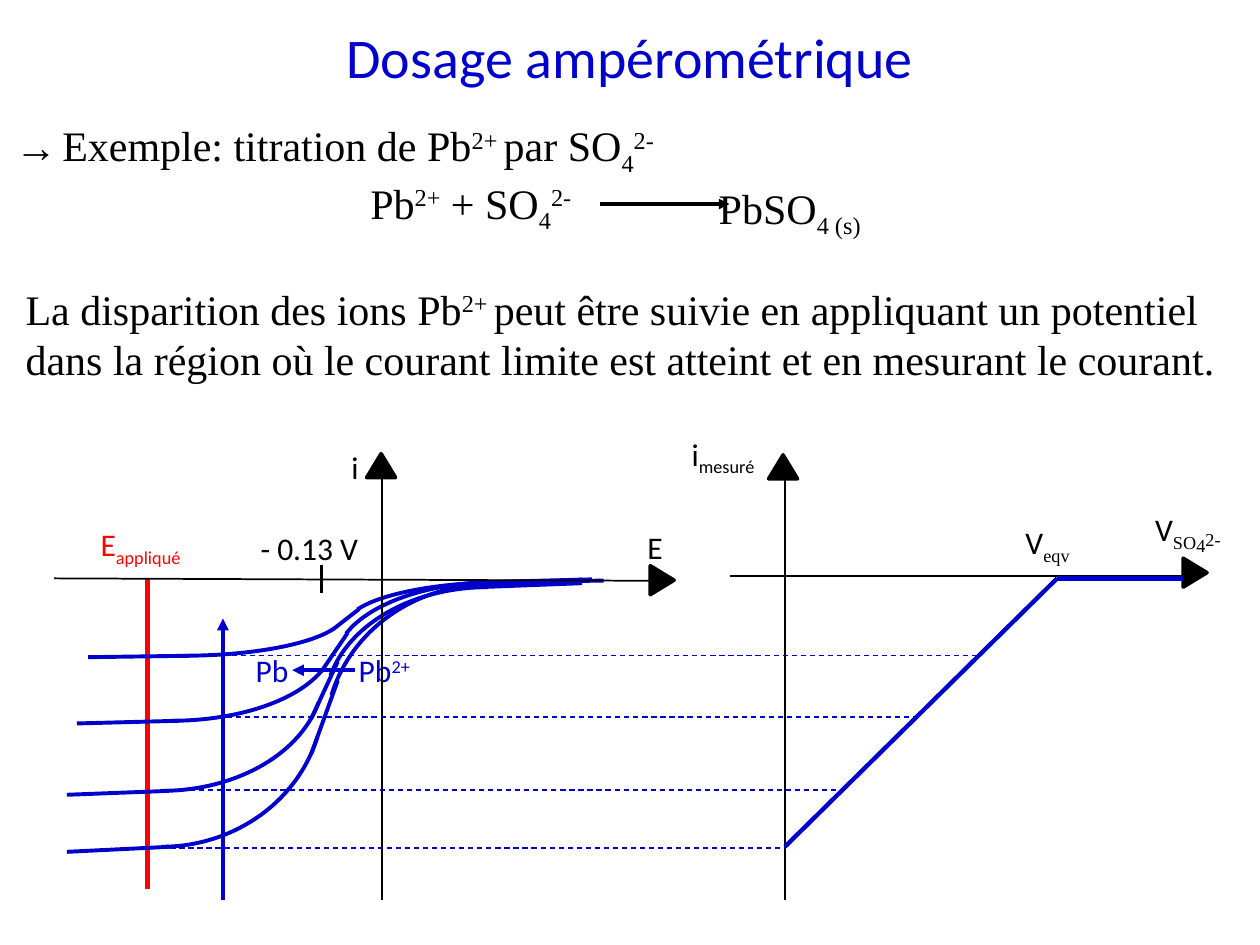
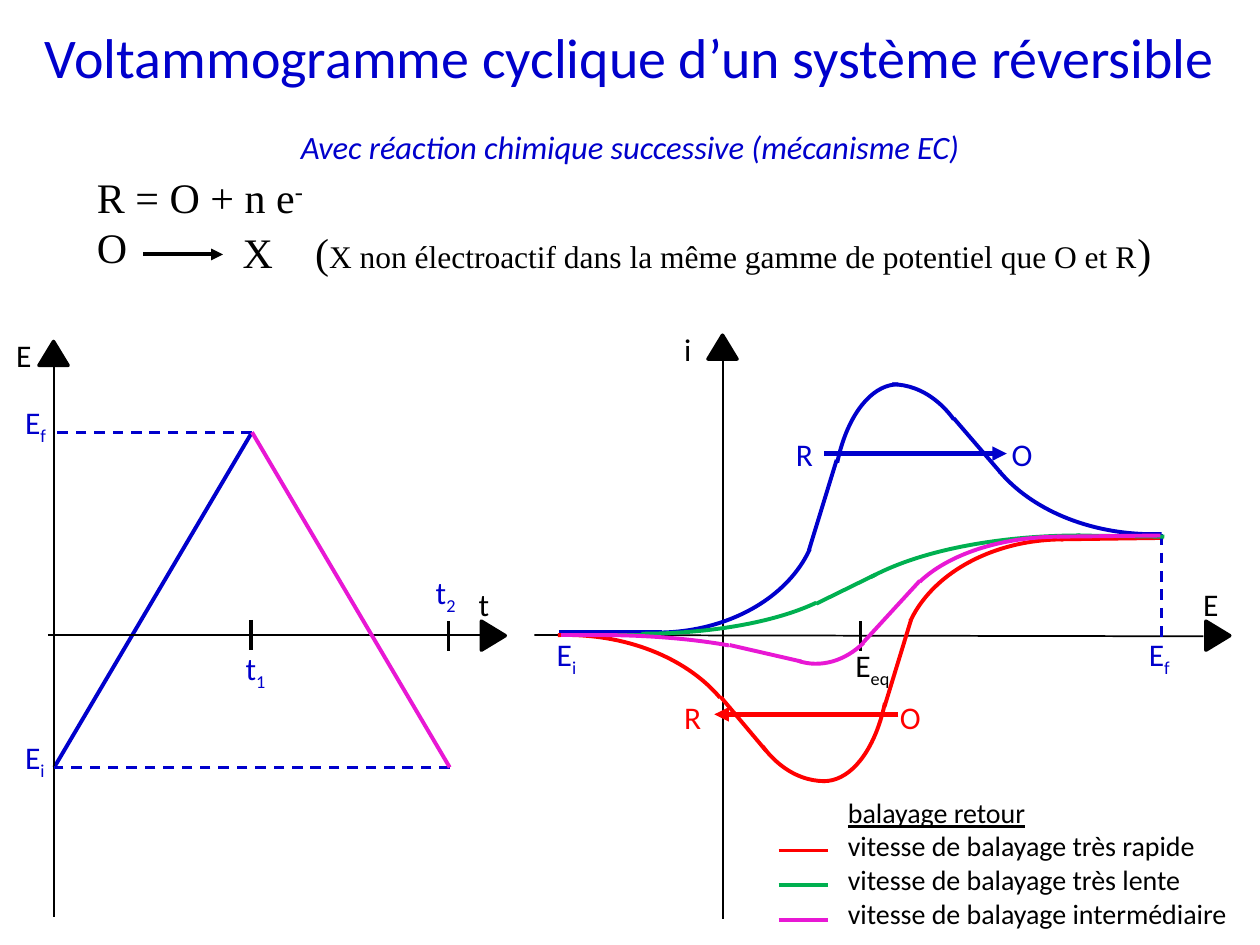
from dataclasses import dataclass
from typing import Any

from lxml.etree import SubElement
from pptx import Presentation
from pptx.dml.color import RGBColor
from pptx.enum.dml import MSO_LINE
from pptx.enum.shapes import MSO_CONNECTOR, MSO_SHAPE
from pptx.enum.text import MSO_ANCHOR, MSO_AUTO_SIZE, PP_ALIGN
from pptx.oxml.ns import qn
from pptx.util import Pt

BLACK = RGBColor(0x00, 0x00, 0x00)
BLUE = RGBColor(0x00, 0x00, 0xCC)
RED = RGBColor(0xFF, 0x00, 0x00)
GREEN = RGBColor(0x00, 0xB0, 0x50)
MAGENTA = RGBColor(0xE8, 0x18, 0xD4)
SANS, SERIF = "Calibri", "Times New Roman"

TITLE = dict(name=SANS, size=Pt(32))
BODY = dict(name=SERIF, size=Pt(24))
LABEL = dict(name=SANS, size=Pt(18))
LEGEND = dict(name=SANS, size=Pt(16))
SMALL_SERIF = dict(name=SERIF)
FRAME = dict(word_wrap=True, auto_size=MSO_AUTO_SIZE.NONE, vertical_anchor=MSO_ANCHOR.TOP)

CURVE = 2.25
HEAD_W, HEAD_H = 16.6, 13.7


def add_runs(p, runs, fmt, color):
    """Each run is text, or (text, baseline in percent[, extra font values])."""
    for run in runs:
        text, base, extra = ((run,) if isinstance(run, str) else run) + (0, {})[:2] \
            if isinstance(run, str) else (run + ({},))[:3]
        r = p.add_run()
        r.text = text
        for key, value in {**fmt, **extra}.items():
            setattr(r.font, key, value)
        r.font.color.rgb = color
        if base:
            r._r.get_or_add_rPr().set("baseline", str(base * 1000))


def format_frame(tf):
    for key, value in FRAME.items():
        setattr(tf, key, value)


def place(sp, x, y, w, h):
    sp.left, sp.top, sp.width, sp.height = Pt(x), Pt(y), Pt(w), Pt(h)
    format_frame(sp.text_frame)


def set_bullet(p, char=None, left=0, hanging=0):
    pPr = p._p.get_or_add_pPr()
    pPr.set("marL", str(Pt(left)))
    pPr.set("indent", str(Pt(-hanging)))
    if char:
        SubElement(pPr, qn("a:buChar")).set("char", char)
    else:
        SubElement(pPr, qn("a:buNone"))


@dataclass
class Region:
    """Draws on a slide with points measured from its own top left corner."""
    shapes: Any
    x: float = 0
    y: float = 0

    def line(self, x1, y1, x2, y2, color=BLACK, width=1, dash=False, arrow=False):
        c = self.shapes.add_connector(
            MSO_CONNECTOR.STRAIGHT, Pt(self.x + x1), Pt(self.y + y1),
            Pt(self.x + x2), Pt(self.y + y2))
        c.line.color.rgb = color
        c.line.width = Pt(width)
        if dash:
            c.line.dash_style = MSO_LINE.DASH
        if arrow:
            SubElement(c.line._get_or_add_ln(), qn("a:tailEnd")).set("type", "triangle")
        SubElement(c._element.spPr, qn("a:effectLst"))

    def arc(self, x, y, w, h, flip, end, color, start=162, rotation=0):
        sp = self.shapes.add_shape(MSO_SHAPE.ARC, Pt(self.x + x), Pt(self.y + y), Pt(w), Pt(h))
        sp.adjustments[0], sp.adjustments[1] = start, end
        sp.rotation = rotation
        for axis in flip:
            sp._element.spPr.find(qn("a:xfrm")).set("flip" + axis, "1")
        sp.fill.background()
        sp.line.color.rgb = color
        sp.line.width = Pt(CURVE)
        sp.shadow.inherit = False

    def axis_head(self, x, y, rotation=0):
        sp = self.shapes.add_shape(MSO_SHAPE.ISOSCELES_TRIANGLE, Pt(self.x + x),
                                   Pt(self.y + y), Pt(HEAD_W), Pt(HEAD_H))
        sp.rotation = rotation
        sp.fill.solid()
        sp.fill.fore_color.rgb = BLACK
        sp.line.color.rgb = BLACK
        sp.line.width = Pt(2)
        SubElement(sp.line._get_or_add_ln(), qn("a:round"))
        sp.shadow.inherit = False

    def text(self, x, y, *runs, color=BLACK, fmt=LABEL, w=60, h=29):
        tf = self.shapes.add_textbox(Pt(self.x + x), Pt(self.y + y), Pt(w), Pt(h)).text_frame
        format_frame(tf)
        add_runs(tf.paragraphs[0], runs, fmt, color)
        return tf

    def curve(self, color, lines, arcs):
        for points in lines:
            self.line(*points, color, CURVE)
        for box, flip, end, *rest in arcs:
            self.arc(*box, flip, end, color, *rest)


def add_slide(prs, title_h, *titles):
    """Title lines are lists of runs; returns the slide's shapes and its body."""
    s = prs.slides.add_slide(prs.slide_layouts[1])
    title, body = s.placeholders
    place(title, 0, 9.4, 720, title_h)
    tf = title.text_frame
    for i, runs in enumerate(titles):
        p = tf.add_paragraph() if i else tf.paragraphs[0]
        p.alignment = PP_ALIGN.CENTER
        add_runs(p, runs, TITLE, BLUE)
    return s.shapes, body


def fill_body(body, box, paragraphs):
    """Each paragraph is (runs, space before, bullet values)."""
    place(body, *box)
    tf = body.text_frame
    for i, (runs, before, bullet) in enumerate(paragraphs):
        p = tf.add_paragraph() if i else tf.paragraphs[0]
        p.space_before = Pt(before)
        set_bullet(p, **bullet)
        add_runs(p, runs, BODY, BLACK)


def polarogram(g, x, y, h, end):
    """One wave; everything follows from its upper arc at x, y with height h."""
    w, bottom, slope = 185.8, y + 0.86 * h, 0.0165 * h
    g.curve(BLUE,
            [(x + 88.6, y, x + 146.9, y - slope),
             (x - 7.9, y + 0.555 * h, x + 7.2, y + 0.315 * h),
             (x - 147.6, bottom + slope, x - 89.3, bottom)],
            [((x, y, w, h), "H", end), ((x - 186.5, y - 0.14 * h, w, h), "V", end)])


def current_potential_chart(g):
    g.line(54.2, 80.5, 54.2, 258.3, RED, 3)
    g.text(20.4, 46.6, "E", ("appliqué", -25), color=RED, w=77)
    g.text(109, 118.6, "Pb", color=BLUE)
    g.text(167.9, 118.6, "Pb", ("2+", 30), color=BLUE)
    for wave in ((155.8, 84.1, 174.2, 206.95), (161.5, 82.6, 92.2, 209.5),
                 (155.8, 85.5, 135.4, 209.5), (168, 82.6, 49, 212.5)):
        polarogram(g, *wave)
    g.text(163.7, 2.7, "i", w=28)
    g.text(111.8, 48.8, "- 0.13 V", w=90)
    g.text(332.9, 48.1, "E", w=42)
    g.line(1, 80.5, 343, 81.9)
    g.line(188.2, 22.2, 188.2, 264.1)
    g.axis_head(179.5, 9.2)
    g.axis_head(340.1, 74.7, 90)
    g.line(153.6, 72.6, 153.6, 89.1, width=2)
    g.line(97.4, 264.1, 97.4, 103.5, BLUE, CURVE, arrow=True)
    g.line(173, 133, 137, 133, BLUE, CURVE, arrow=True)


def titration_chart(g):
    g.text(8.1, 4.8, "i", ("mesuré", -25), w=99)
    g.line(68.6, 32.2, 68.6, 274.1)
    g.axis_head(59.2, 19.9)
    g.line(36.9, 89, 297.5, 89)
    g.axis_head(294.6, 80.4, 90)
    for x1, x2, y in ((-287.8, 68.6, 244.6), (-255.4, 144.2, 169.7),
                      (-247.5, 178.7, 134.4), (-271.3, 98.8, 211.4)):
        g.line(x1, y, x2, y, BLUE, 0.75, dash=True)
    g.line(68.6, 243.8, 224.1, 90.5, BLUE, 2.5)
    g.line(224.1, 90.5, 296.1, 90.5, BLUE, 2.5)
    g.text(198.9, 55.2, "V", ("eqv", -25, SMALL_SERIF))
    g.text(273, 48, "V", ("SO", -25, SMALL_SERIF), ("4", -35, SMALL_SERIF),
           ("2-", -15, SMALL_SERIF), w=67)


def potential_time_chart(g):
    start, peak, end = (31, 253.5), (144, 62), (257, 253.5)
    g.axis_head(273.6, 171.4, 90)
    g.text(266.4, 145.5, "t", w=42)
    g.axis_head(22.3, 10.1)
    g.text(2.2, 3.6, "E", w=28)
    g.line(*start, *peak, BLUE, CURVE)
    g.line(27.4, 177.9, 275, 177.9)
    g.line(31, 18, 31, 339.2)
    for x, y in ((143.3, 169.2), (256.3, 170)):
        g.line(x, y, x, y + 17, width=2)
    for x, y in (peak, end):
        g.line(x, y, 31, y, BLUE, 1.5, dash=True)
    for x, y, name, index in ((7.2, 41.8, "E", "f"), (7.2, 233.3, "E", "i"),
                              (133.2, 182.2, "t", "1"), (241.9, 139, "t", "2")):
        g.text(x, y, name, (index, -25), color=BLUE)
    g.line(*peak, *end, MAGENTA, CURVE)


def voltammogram(g):
    g.text(181.7, 185.8, "E", ("eq", -25))
    g.line(5.3, 182.9, 387.6, 183.6)
    g.line(113.3, 23.8, 113.3, 344.9)
    g.axis_head(104.6, 11.5)
    g.axis_head(387.6, 176.4, 90)
    g.line(191.8, 175, 191.8, 192.2, width=2)
    g.text(380.4, 150.5, "E", w=39)
    g.text(83.8, 5, "i", w=28)
    g.curve(BLUE,
            [(245, 59, 271.7, 90), (19.7, 181.4, 78, 181.4), (162.2, 134.6, 178.1, 82.8)],
            [((175.9, 39.6, 74.9, 140.4), "H", 194.32),
             ((-17, 38.9, 185, 142.6), "V", 206.95),
             ((255.8, -25.9, 206.6, 151.2), "HV", 201.36, 159.81),
             ((159.4, 39.6, 100.8, 140.4), "", 183.04)])
    g.curve(RED,
            [(306.2, 128.2, 364.6, 127.4), (205.4, 223.9, 220.6, 174.2),
             (111.8, 218.2, 137.8, 249.1)],
            [((214.8, 128.2, 185.8, 140.4), "H", 206.95),
             ((133.4, 126, 74.9, 140.4), "V", 194.32),
             ((-79.7, 182.9, 206.6, 151.2), "", 201.36, 159.81),
             ((120.5, 126, 101.5, 140.4), "HV", 183.04)])
    for color, x_r, x_o, y, ends in ((BLUE, 147.8, 271, 64.8, (170.9, 275.3)),
                                     (RED, 83.8, 207.1, 215.3, (213.4, 108.2))):
        g.text(x_r, y, "R", color=color, w=30)
        g.text(x_o, y, "O", color=color, w=30)
        arrow_y = y + (14.4 if color == BLUE else 12.9)
        g.line(ends[0], arrow_y, ends[1], arrow_y, color, 2.75, arrow=True)
    for x, index in ((11, "i"), (349.4, "f")):
        g.text(x, 179.3, "E", (index, -25), color=BLUE)
    g.line(363.8, 125.3, 363.8, 184.3, BLUE, 1.5, dash=True)
    g.curve(GREEN,
            [(71.5, 182.9, 21.1, 182.9), (166.6, 164.9, 200.4, 148.3),
             (365.3, 126.7, 314.9, 126)],
            [((170.9, 126, 293, 112.3), "H", 206.95),
             ((-58.8, 92.9, 250.6, 89.3), "V", 206.95)])
    g.curve(MAGENTA,
            [(304.1, 126.7, 363.1, 126), (193.2, 187.2, 225.6, 151.9),
             (116.9, 188.6, 157.9, 198), (44.9, 182.9, 20.4, 182.9)],
            [((133.4, 109.4, 74.9, 90.7), "V", 194.32, 162, 19),
             ((212.6, 126.7, 185.8, 105.1), "H", 204.83),
             ((-80.4, 182.9, 244.8, 57.6), "", 205.78, 159.81)])


def scan_legend(g):
    tf = g.text(37.4, 2, ("balayage retour", 0, dict(underline=True)), fmt=LEGEND, w=242, h=86)
    for i, (speed, color) in enumerate((("très rapide", RED), ("très lente", GREEN),
                                        ("intermédiaire", MAGENTA))):
        add_runs(tf.add_paragraph(), ["vitesse de balayage " + speed], LEGEND, BLACK)
        y = 37 + 19.8 * i
        g.line(5, y, 33, y, color, CURVE)


def amperometry_slide(prs):
    shapes, body = add_slide(prs, 46, ["Dosage ampérométrique"])
    fill_body(body, (1.4, 64.8, 718, 152.6), [
        (["Exemple: titration de Pb", ("2+ ", 30), "par SO", ("4", -25), ("2-", 30)],
         0, dict(char="→", left=27, hanging=27)),
        (["Pb", ("2+", 30), " + SO", ("4", -25), ("2-", 30)], 0, dict(left=203)),
        (["La disparition des ions Pb", ("2+ ", 30),
          "peut être suivie en appliquant un potentiel"], 28, dict(left=6)),
        (["dans la région où le courant limite est atteint et en mesurant le courant."],
         0, dict(left=6))])
    g = Region(shapes)
    g.text(403.6, 100.5, "PbSO", ("4 (s)", -25), fmt=BODY, w=120, h=38)
    g.line(342.7, 116.6, 416.9, 116.6, width=2, arrow=True)
    current_potential_chart(Region(shapes, 30, 250))
    titration_chart(Region(shapes, 380, 240))


def voltammetry_slide(prs):
    shapes, body = add_slide(
        prs, 72, ["Voltammogramme cyclique d’un système réversible"],
        [("Avec réaction chimique successive (mécanisme EC)", -25, dict(italic=True))])
    fill_body(body, (48.2, 94.3, 150, 65.5), [
        (["R = O + n e", ("-", 30)], 0, {}), (["O"], 0, {})])
    g = Region(shapes)
    g.text(131.6, 125.9, "X", fmt=BODY, w=40, h=35)
    g.text(173, 125.9, "(", ("X non électroactif dans la même gamme de potentiel que O et R",
                             0, dict(size=Pt(18))), ")", fmt=BODY, w=520, h=35)
    g.line(82, 145.4, 127.4, 145.4, width=CURVE, arrow=True)
    potential_time_chart(Region(shapes, 0, 185))
    voltammogram(Region(shapes, 300, 180))
    scan_legend(Region(shapes, 440, 449))


def main():
    prs = Presentation()
    prs.slide_width, prs.slide_height = Pt(720), Pt(540)
    amperometry_slide(prs)
    voltammetry_slide(prs)
    prs.save("out.pptx")


if __name__ == "__main__":
    main()
